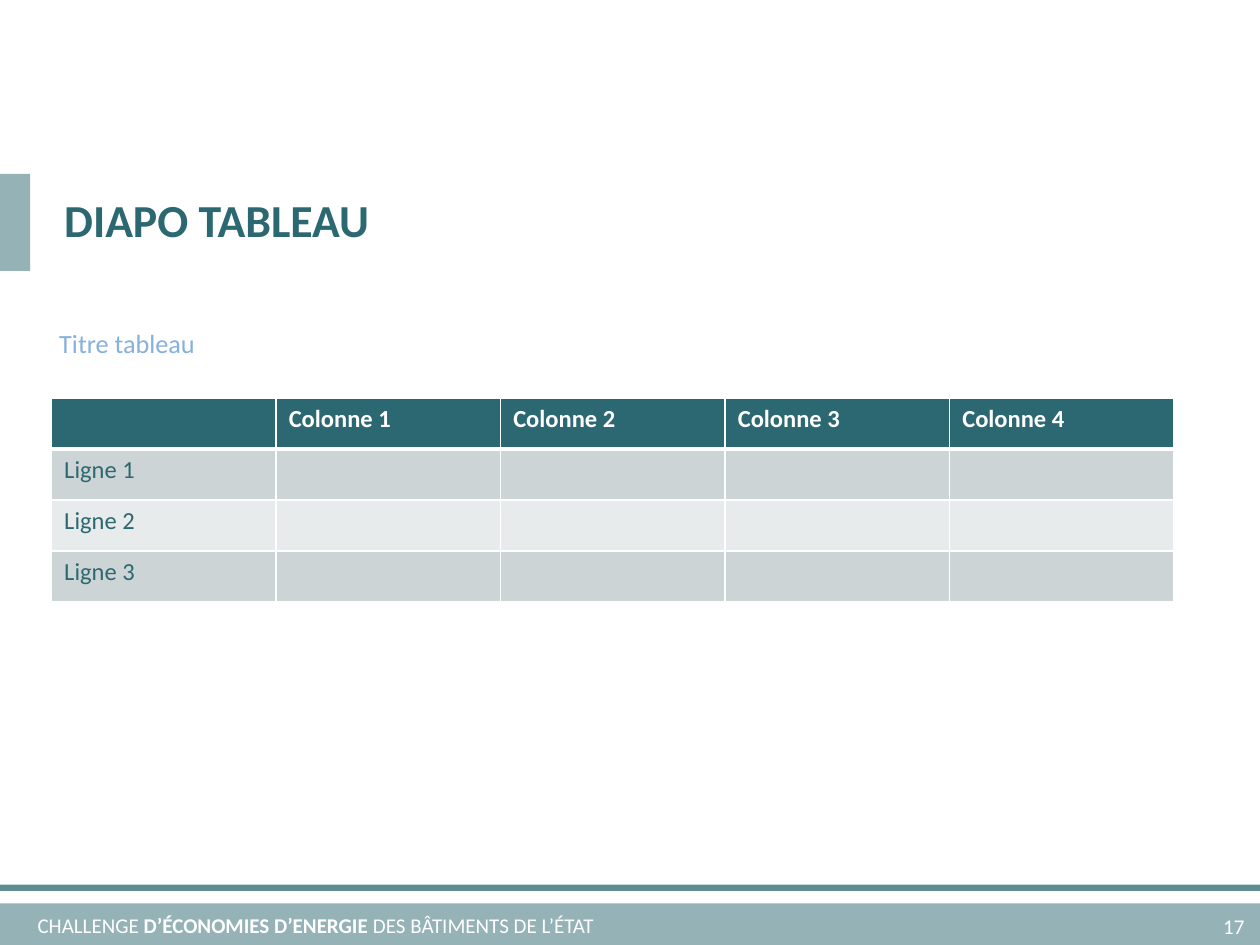
"""Build the table slide of the energy savings challenge deck."""
from lxml import etree
from pptx import Presentation, util as u
from pptx.dml.color import RGBColor
from pptx.enum import shapes, text
from pptx.oxml.ns import qn

TEAL = RGBColor(0x2C, 0x68, 0x71)
SKY = RGBColor(0x86, 0xB0, 0xDD)
WHITE = RGBColor(0xFF, 0xFF, 0xFF)
DARK_BAND = RGBColor(0xCD, 0xD4, 0xD5)
LIGHT_BAND = RGBColor(0xE8, 0xEB, 0xEB)
FONT = "Calibri"

TITLE = "DIAPO TABLEAU"
CAPTION = "Titre tableau"
FOOTER = [("CHALLENGE ", False), ("D’ÉCONOMIES D’ENERGIE ", True),
          ("DES BÂTIMENTS DE L’ÉTAT", False)]
PAGE = "17"
COLUMNS = ["", "Colonne 1", "Colonne 2", "Colonne 3", "Colonne 4"]
ROWS = ["Ligne 1", "Ligne 2", "Ligne 3"]
BARS = [((0, 7.17, 10, 0.33), 50), ((0, 7.02, 10, 0.05), 75),
        ((-0.01, 1.38, 0.25, 0.77), 50)]


def inches(box):
    return [u.Inches(length) for length in box]


def place(part, box):
    part.left, part.top, part.width, part.height = inches(box)


def add_run(paragraph, words, size, color, bold=False):
    run = paragraph.add_run()
    run.text = words
    run.font.name = FONT
    run.font.size = u.Pt(size)
    run.font.bold = bold
    run.font.color.rgb = color


def add_bar(slide, box, opacity):
    bar = slide.shapes.add_shape(shapes.MSO_SHAPE.RECTANGLE, *inches(box))
    bar.shadow.inherit = False
    bar.fill.solid()
    bar.fill.fore_color.rgb = TEAL
    bar.line.fill.background()
    color = bar.fill._xPr.find(qn("a:solidFill"))[0]
    etree.SubElement(color, qn("a:alpha"), val=str(opacity * 1000))


def add_label(slide, box, runs):
    label = slide.shapes.add_textbox(*inches(box))
    label.text_frame.word_wrap = True
    for words, bold in runs:
        add_run(label.text_frame.paragraphs[0], words, 12, WHITE, bold)


def add_borders(cell, bottom, top):
    properties = cell._tc.get_or_add_tcPr()
    sides = [("lnL", 1), ("lnR", 1), ("lnT", top), ("lnB", bottom)]
    for position, (side, points) in enumerate(sides):
        line = etree.Element(qn("a:" + side), w=str(u.Pt(points)))
        fill = etree.SubElement(line, qn("a:solidFill"))
        etree.SubElement(fill, qn("a:srgbClr"), val=str(WHITE))
        properties.insert(position, line)


def add_grid(slide):
    rows = [COLUMNS] + [[row] + [""] * (len(COLUMNS) - 1) for row in ROWS]
    grid = slide.shapes.add_table(
        len(rows), len(COLUMNS), *inches((0.41, 3.16, 8.91, 1.62))).table
    for r, words_in_row in enumerate(rows):
        header = r == 0
        band = TEAL if header else (LIGHT_BAND, DARK_BAND)[r % 2]
        for c, words in enumerate(words_in_row):
            cell = grid.cell(r, c)
            cell.fill.solid()
            cell.fill.fore_color.rgb = band
            add_borders(cell, 3 if header else 1, 3 if r == 1 else 1)
            paragraph = cell.text_frame.paragraphs[0]
            if words:
                add_run(paragraph, words, 14, WHITE if header else TEAL, header)
            else:
                paragraph.font.size = u.Pt(14)


def main():
    deck = Presentation()
    deck.slide_width, deck.slide_height = u.Inches(10), u.Inches(7.5)
    slide = deck.slides.add_slide(deck.slide_layouts[1])

    for box, opacity in BARS:
        add_bar(slide, box, opacity)
    add_label(slide, (0.2, 7.19, 9.37, 0.3), FOOTER)

    title, caption = slide.placeholders
    place(title, (0.41, 1.47, 8.91, 0.54))
    title.text_frame.vertical_anchor = text.MSO_ANCHOR.MIDDLE
    title.text_frame.auto_size = text.MSO_AUTO_SIZE.NONE
    heading = title.text_frame.paragraphs[0]
    heading.alignment = text.PP_ALIGN.LEFT
    add_run(heading, TITLE, 26.2, TEAL, True)

    place(caption, (0.37, 2.55, 8.91, 0.57))
    caption.text_frame.auto_size = text.MSO_AUTO_SIZE.NONE
    line = caption.text_frame.paragraphs[0]
    line.space_before = u.Pt(0)
    properties = line._p.get_or_add_pPr()
    properties.set("marL", "0")
    properties.set("indent", "0")
    etree.SubElement(properties, qn("a:buNone"))
    add_run(line, CAPTION, 15, SKY)

    add_grid(slide)
    add_label(slide, (9.61, 7.2, 0.39, 0.3), [(PAGE, False)])
    deck.save("out.pptx")


if __name__ == "__main__":
    main()
